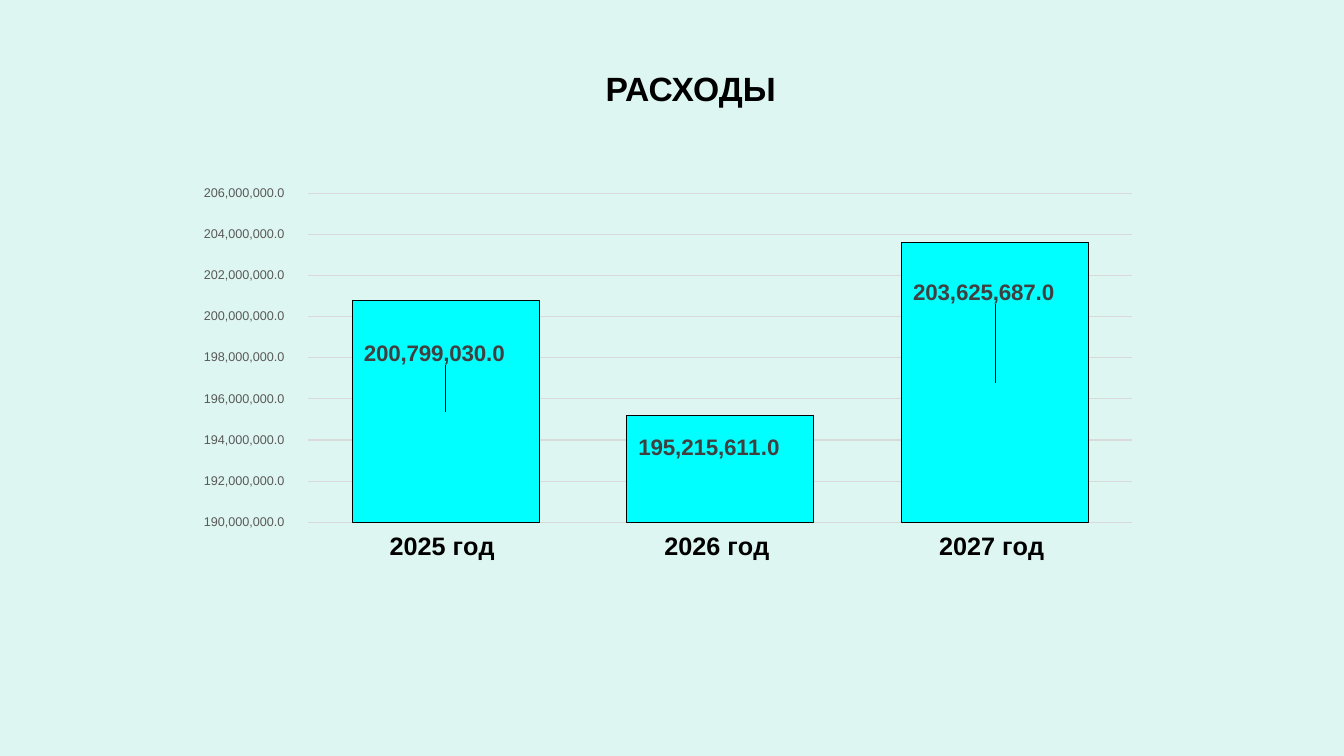
"""Build a slide with a column chart of expenses by year."""
from dataclasses import dataclass

import pptx
import pptx.chart.data
import pptx.dml.color
import pptx.enum.chart
import pptx.enum.text
import pptx.oxml
import pptx.oxml.ns
import pptx.util

Inches = pptx.util.Inches


@dataclass(frozen=True)
class Theme:
    """Colours, type sizes and number formats of the slide."""
    font: str = "Arial"
    background: str = "DEF6F1"
    ink: str = "000000"
    label: str = "404040"
    scale: str = "595959"
    grid: str = "D9D9D9"
    column: str = "00FFFF"
    title_size: int = 24
    category_size: int = 18
    label_size: int = 16
    chart_size: int = 10
    scale_size: int = 9
    line_width: float = 0.75
    label_format: str = "#,##0.0"
    scale_format: str = "_-* #,##0.0_р_._-;\\-* #,##0.0_р_._-"


THEME = Theme()
EXPENSES = {"2025 год ": 200799030, "2026 год ": 195215611, "2027 год ": 203625687}
LABEL_SHIFTS = [(-0.01, -0.11), (-0.01, -0.04), (-0.01, -0.17)]
PLOT_AREA = {"x": 0.157, "y": 0.095, "w": 0.726, "h": 0.623}


def colour(code):
    """Return a colour object for a hex code."""
    return pptx.dml.color.RGBColor.from_string(code)


def style_font(font, size, code, bold=False):
    """Apply the theme typeface with a size, colour and weight."""
    font.name = THEME.font
    font.size = pptx.util.Pt(size)
    font.bold = bold
    font.color.rgb = colour(code)


def style_line(line, code):
    """Draw a thin line in the given colour."""
    line.color.rgb = colour(code)
    line.width = pptx.util.Pt(THEME.line_width)


def chart_element(tag, **attributes):
    """Return a chart XML element with the given attributes."""
    element = pptx.oxml.parse_xml(f"<c:{tag} {pptx.oxml.ns.nsdecls('c')}/>")
    for name, value in attributes.items():
        element.set(name, str(value))
    return element


def manual_layout(settings):
    """Return a manual layout element from tag and value pairs."""
    layout, manual = chart_element("layout"), chart_element("manualLayout")
    layout.append(manual)
    for tag, value in settings.items():
        manual.append(chart_element(tag, val=value))
    return layout


def add_title(page, box, text):
    """Place the slide title in its box."""
    title = page.shapes.title
    title.left, title.top, title.width, title.height = map(Inches, box)
    frame = title.text_frame
    frame.text = text
    frame.vertical_anchor = pptx.enum.text.MSO_ANCHOR.MIDDLE
    para = frame.paragraphs[0]
    para.alignment = pptx.enum.text.PP_ALIGN.CENTER
    style_font(para.runs[0].font, THEME.title_size, THEME.ink, True)


def style_axes(chart):
    """Format the year axis and the value scale."""
    years, scale = chart.category_axis, chart.value_axis
    style_font(years.tick_labels.font, THEME.category_size, THEME.ink, True)
    style_font(scale.tick_labels.font, THEME.scale_size, THEME.scale)
    for axis in (years, scale):
        axis.format.line.fill.background()
        axis.major_tick_mark = pptx.enum.chart.XL_TICK_MARK.OUTSIDE
    scale.minimum_scale, scale.maximum_scale = 190_000_000, 206_000_000
    scale.major_unit = 2_000_000
    scale.tick_labels.number_format = THEME.scale_format
    scale.tick_labels.number_format_is_linked = False
    style_line(scale.major_gridlines.format.line, THEME.grid)


def label_columns(series):
    """Show each value, shifted from the centre of its column."""
    labels = series.data_labels
    labels.show_value = True
    labels.number_format = THEME.label_format
    labels.number_format_is_linked = False
    style_font(labels.font, THEME.label_size, THEME.label, True)
    for index, (across, down) in enumerate(LABEL_SHIFTS):
        label = series.points[index].data_label
        style_font(label.font, THEME.label_size, THEME.label, True)
        label.position = pptx.enum.chart.XL_LABEL_POSITION.CENTER
        element = labels._element.findall(pptx.oxml.ns.qn("c:dLbl"))[index]
        element.insert(1, manual_layout({"x": across, "y": down}))
        element.insert(2, chart_element(
            "numFmt", formatCode=THEME.label_format, sourceLinked=0))


def add_expense_chart(page, box):
    """Place the column chart of expenses in its box."""
    chart_data = pptx.chart.data.CategoryChartData(number_format=THEME.label_format)
    chart_data.categories = list(EXPENSES)
    chart_data.add_series("Series 1", list(EXPENSES.values()))
    chart = page.shapes.add_chart(
        pptx.enum.chart.XL_CHART_TYPE.COLUMN_STACKED, *map(Inches, box), chart_data).chart
    chart.has_legend = False
    chart.has_title = False
    style_font(chart.font, THEME.chart_size, THEME.ink)
    style_axes(chart)
    plot = chart.plots[0]
    plot.gap_width, plot.overlap = 47, 100
    plot.vary_by_categories = False
    series = plot.series[0]
    series.format.fill.solid()
    series.format.fill.fore_color.rgb = colour(THEME.column)
    style_line(series.format.line, THEME.ink)
    label_columns(series)
    area = chart._chartSpace.find(".//" + pptx.oxml.ns.qn("c:plotArea"))
    for layout in area.findall(pptx.oxml.ns.qn("c:layout")):
        area.remove(layout)
    area.insert(0, manual_layout(
        {"layoutTarget": "inner", "xMode": "edge", "yMode": "edge", **PLOT_AREA}))


def main():
    """Build and save the deck."""
    deck = pptx.Presentation()
    deck.slide_width, deck.slide_height = Inches(13.33), Inches(7.5)
    page = deck.slides.add_slide(deck.slide_layouts[5])
    page.background.fill.solid()
    page.background.fill.fore_color.rgb = colour(THEME.background)
    add_title(page, (2.85, 0.64, 8, 0.47), "РАСХОДЫ")
    add_expense_chart(page, (1.29, 1.42, 11.26, 5.24))
    deck.save("out.pptx")


if __name__ == "__main__":
    main()
